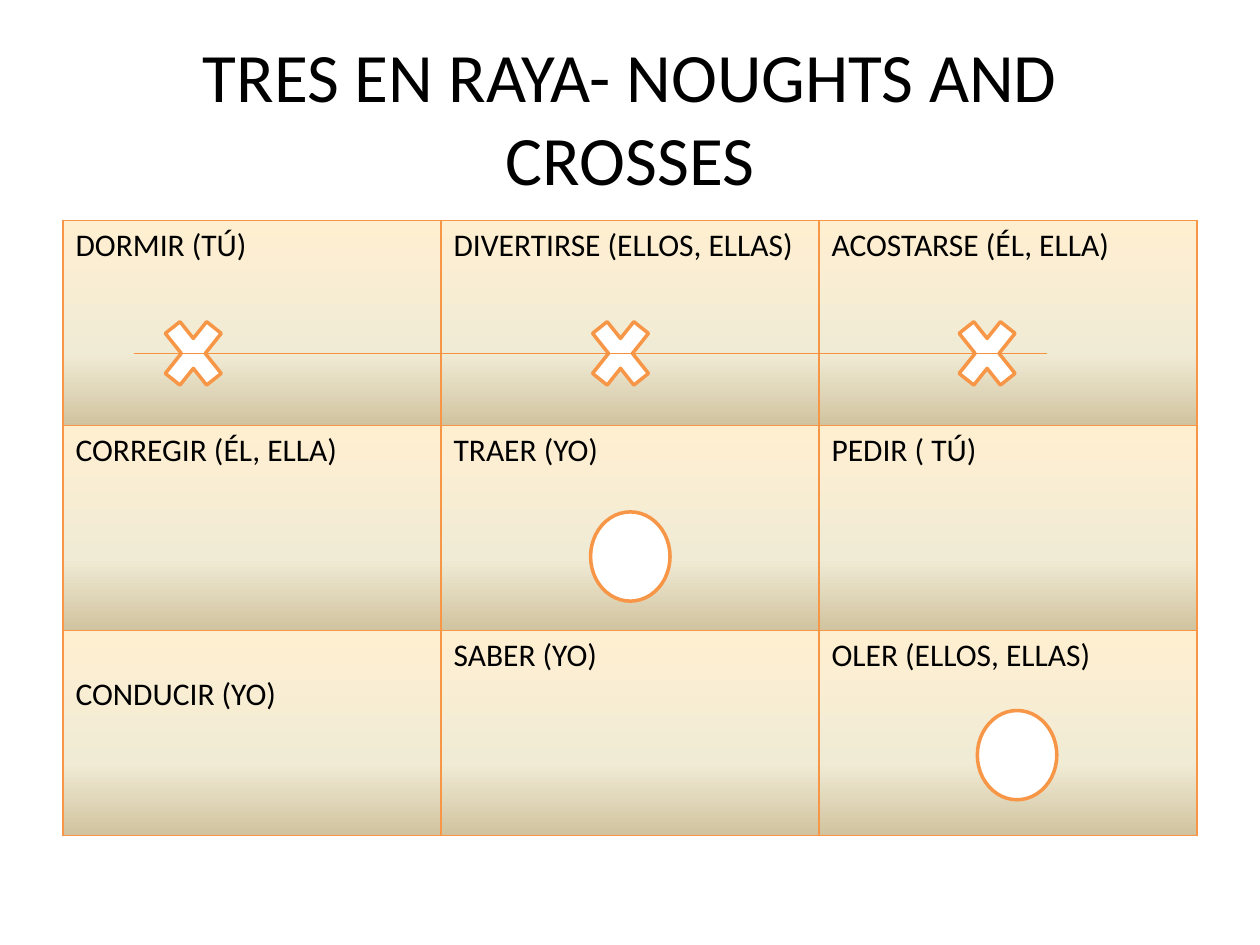
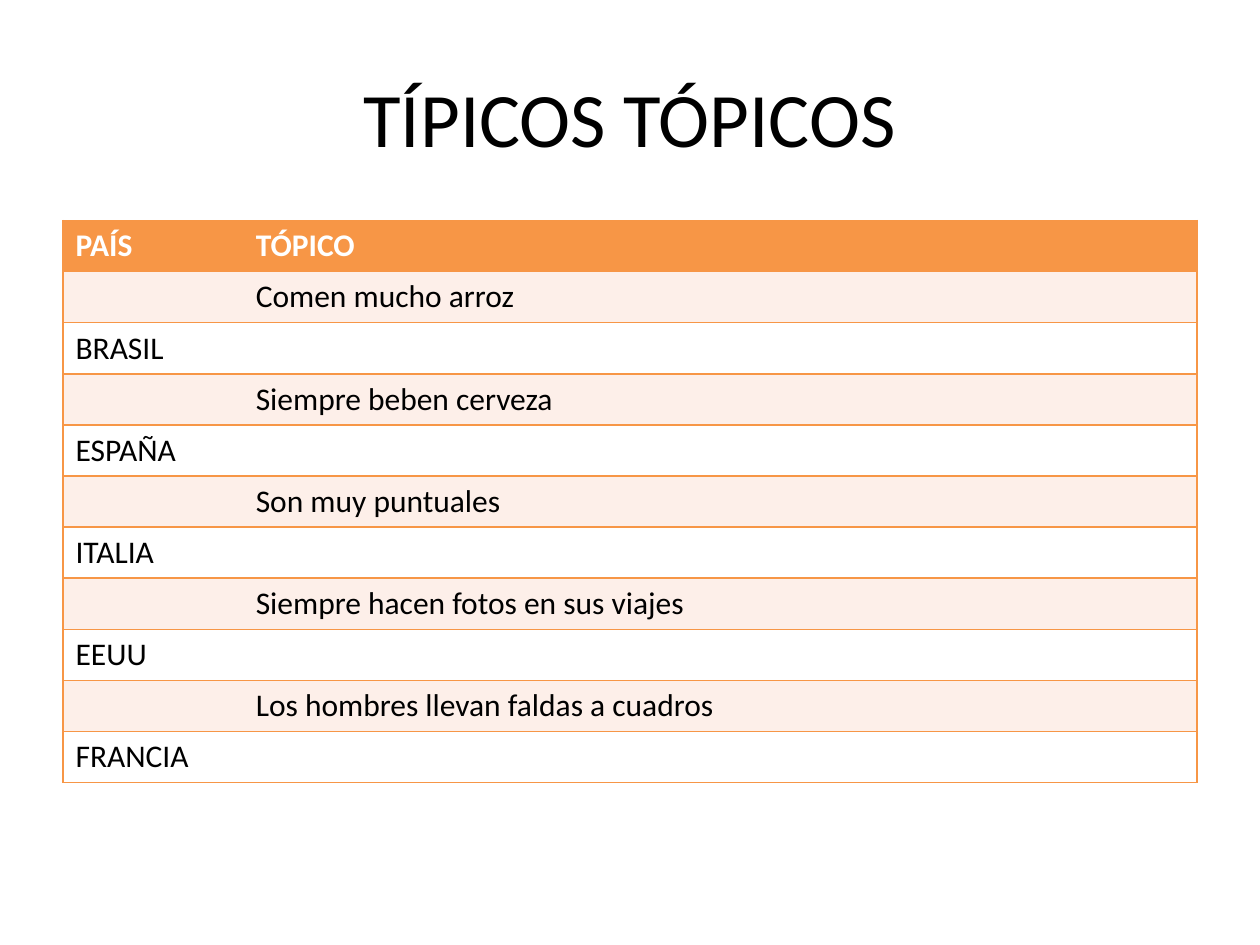
from dataclasses import dataclass

from lxml.etree import SubElement
from pptx import Presentation
from pptx.dml.color import RGBColor
from pptx.enum.shapes import MSO_CONNECTOR, MSO_SHAPE
from pptx.enum.text import MSO_ANCHOR, PP_ALIGN
from pptx.oxml.ns import qn
from pptx.util import Pt


@dataclass(frozen=True)
class Theme:
    font: str = "Calibri"
    text: str = "000000"
    white: str = "FFFFFF"
    orange: str = "F79646"
    strike: str = "F69240"
    band: str = "FDEFE9"
    parchment: tuple = ((0, "FFEFD1"), (65, "F0EBD5"), (100, "D1C39F"))
    title_size: float = 44
    long_title_size: float = 39.6
    body_size: float = 18
    border: float = 1
    left: float = 36
    width: float = 648
    title_top: float = 21.6
    title_height: float = 90
    table_top: float = 126
    plain_table: str = "{2D5ABB26-0587-4C30-8999-92F81FD0307C}"


class Deck:
    def __init__(self, theme):
        self.theme = theme
        self.prs = Presentation()
        self.prs.slide_width, self.prs.slide_height = Pt(720), Pt(540)
        self.s = None

    def slide(self, title, size):
        self.s = self.prs.slides.add_slide(self.prs.slide_layouts[6])
        t = self.theme
        sp = self.s.shapes.add_textbox(Pt(t.left), Pt(t.title_top), Pt(t.width), Pt(t.title_height))
        tf = sp.text_frame
        tf.word_wrap = True
        tf.vertical_anchor = MSO_ANCHOR.MIDDLE
        tf.text = title
        tf.paragraphs[0].alignment = PP_ALIGN.CENTER
        self.style_text(tf, size, t.text)

    def style_text(self, tf, size, color, bold=False):
        for p in tf.paragraphs:
            p.font.size = Pt(size)
            for r in p.runs:
                r.font.name = self.theme.font
                r.font.size = Pt(size)
                r.font.bold = bold
                r.font.color.rgb = RGBColor.from_string(color)

    def table(self, rows, col_widths, row_height):
        t = self.theme
        frame = self.s.shapes.add_table(
            len(rows), len(col_widths), Pt(t.left), Pt(t.table_top),
            Pt(t.width), Pt(row_height * len(rows)))
        table = frame.table
        table.first_row = table.horz_banding = False
        table._tbl.tblPr.find(qn("a:tableStyleId")).text = t.plain_table
        for col, width in zip(table.columns, col_widths):
            col.width = Pt(width)
        for row, texts in zip(table.rows, rows):
            row.height = Pt(row_height)
            for cell, text in zip(row.cells, texts):
                cell.text = text
        return table

    def style_cell(self, cell, sides, fill, color, bold=False):
        """Draw the borders named in sides (of LRTB), then the fill: a colour or gradient stops."""
        t = self.theme
        tcPr = cell._tc.get_or_add_tcPr()
        for side in sides:
            ln = SubElement(tcPr, qn(f"a:ln{side}"), w=str(Pt(t.border)))
            SubElement(SubElement(ln, qn("a:solidFill")), qn("a:srgbClr"), val=t.orange)
        if isinstance(fill, str):
            cell.fill.solid()
            cell.fill.fore_color.rgb = RGBColor.from_string(fill)
        else:
            grad = SubElement(tcPr, qn("a:gradFill"))
            stops = SubElement(grad, qn("a:gsLst"))
            for percent, stop_color in fill:
                gs = SubElement(stops, qn("a:gs"), pos=str(percent * 1000))
                SubElement(gs, qn("a:srgbClr"), val=stop_color)
            SubElement(grad, qn("a:lin"), ang="5400000", scaled="0")
        self.style_text(cell.text_frame, t.body_size, color, bold)

    def mark(self, kind, left, top, width, height):
        t = self.theme
        sp = self.s.shapes.add_shape(kind, Pt(left), Pt(top), Pt(width), Pt(height))
        sp.shadow.inherit = False
        sp.fill.solid()
        sp.fill.fore_color.rgb = RGBColor.from_string(t.white)
        sp.line.color.rgb = RGBColor.from_string(t.orange)
        sp.line.width = Pt(2)

    def line(self, x1, y1, x2, y2):
        cn = self.s.shapes.add_connector(MSO_CONNECTOR.STRAIGHT, Pt(x1), Pt(y1), Pt(x2), Pt(y2))
        cn.line.color.rgb = RGBColor.from_string(self.theme.strike)
        cn.line.width = Pt(0.75)
        SubElement(cn._element.spPr, qn("a:effectLst"))


def noughts_and_crosses(deck):
    t = deck.theme
    deck.slide("TRES EN RAYA- NOUGHTS AND CROSSES", t.long_title_size)
    verbs = [
        ["DORMIR (TÚ)", "DIVERTIRSE (ELLOS, ELLAS)", "ACOSTARSE (ÉL, ELLA)"],
        ["CORREGIR (ÉL, ELLA)", "TRAER (YO)", "PEDIR ( TÚ)"],
        ["CONDUCIR (YO)", "SABER (YO)", "OLER (ELLOS, ELLAS)"],
    ]
    board = deck.table(verbs, [t.width / 3] * 3, 117.1)
    for cell in board.iter_cells():
        deck.style_cell(cell, "LRTB", t.parchment, t.text)
    board.cell(2, 0).margin_top = Pt(25.8)

    for left in (331.9, 541.4, 87.8):
        deck.mark(MSO_SHAPE.MATH_MULTIPLY, left, 173.5, 45.4, 56.9)
    for left, top in ((337.5, 292.5), (558.5, 406)):
        deck.mark(MSO_SHAPE.FLOWCHART_CONNECTOR, left, top, 45.4, 51)
    deck.line(76.5, 202, 598.5, 202)


def typical_cliches(deck):
    t = deck.theme
    deck.slide("TÍPICOS TÓPICOS", t.title_size)
    rows = [
        ("PAÍS", "TÓPICO"),
        ("", "Comen mucho arroz"),
        ("BRASIL", ""),
        ("", "Siempre beben cerveza"),
        ("ESPAÑA", ""),
        ("", "Son muy puntuales"),
        ("ITALIA", ""),
        ("", "Siempre hacen fotos en sus viajes"),
        ("EEUU", ""),
        ("", "Los hombres llevan faldas a cuadros"),
        ("FRANCIA", ""),
    ]
    table = deck.table(rows, [103, t.width - 103], 29.2)
    for i, row in enumerate(table.rows):
        header = i == 0
        fill = t.orange if header else t.band if i % 2 else t.white
        for cell, sides in zip(row.cells, ("LTB", "RTB")):
            deck.style_cell(cell, sides, fill, t.white if header else t.text, header)


def main():
    deck = Deck(Theme())
    noughts_and_crosses(deck)
    typical_cliches(deck)
    deck.prs.save("out.pptx")


if __name__ == "__main__":
    main()
